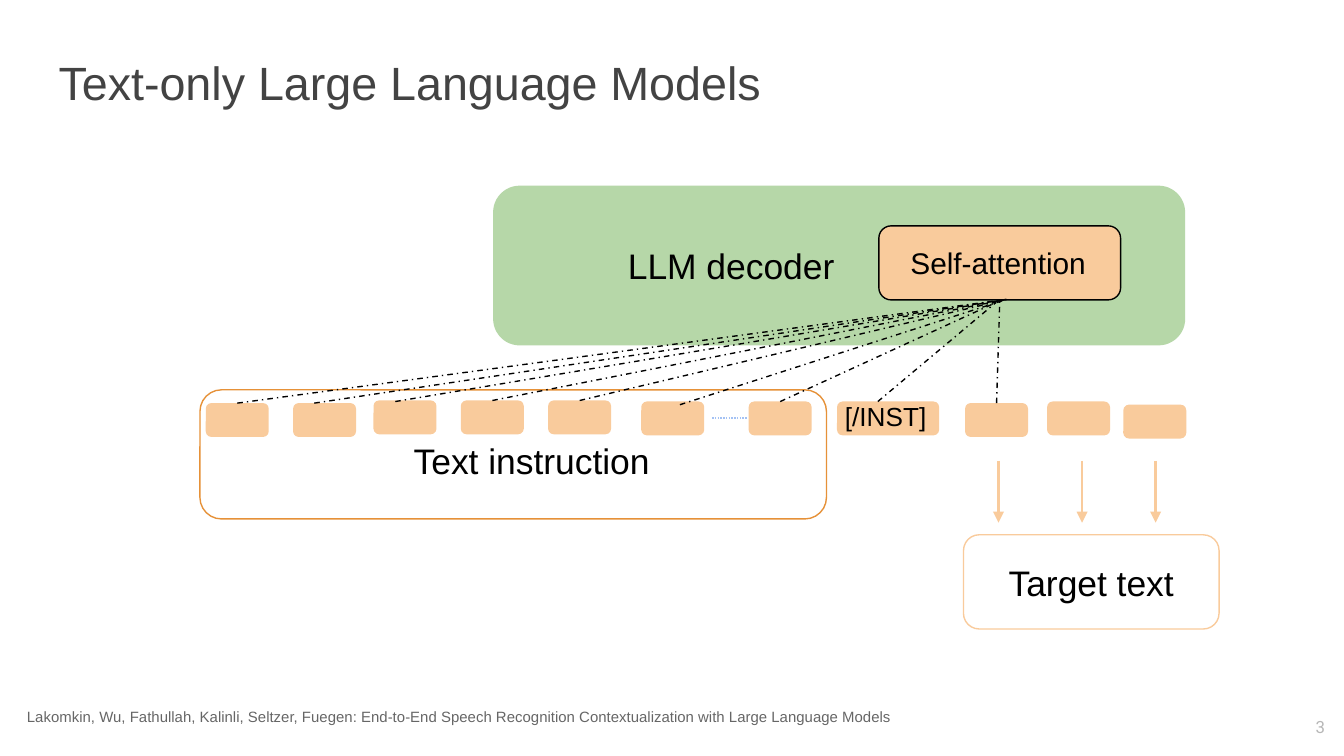
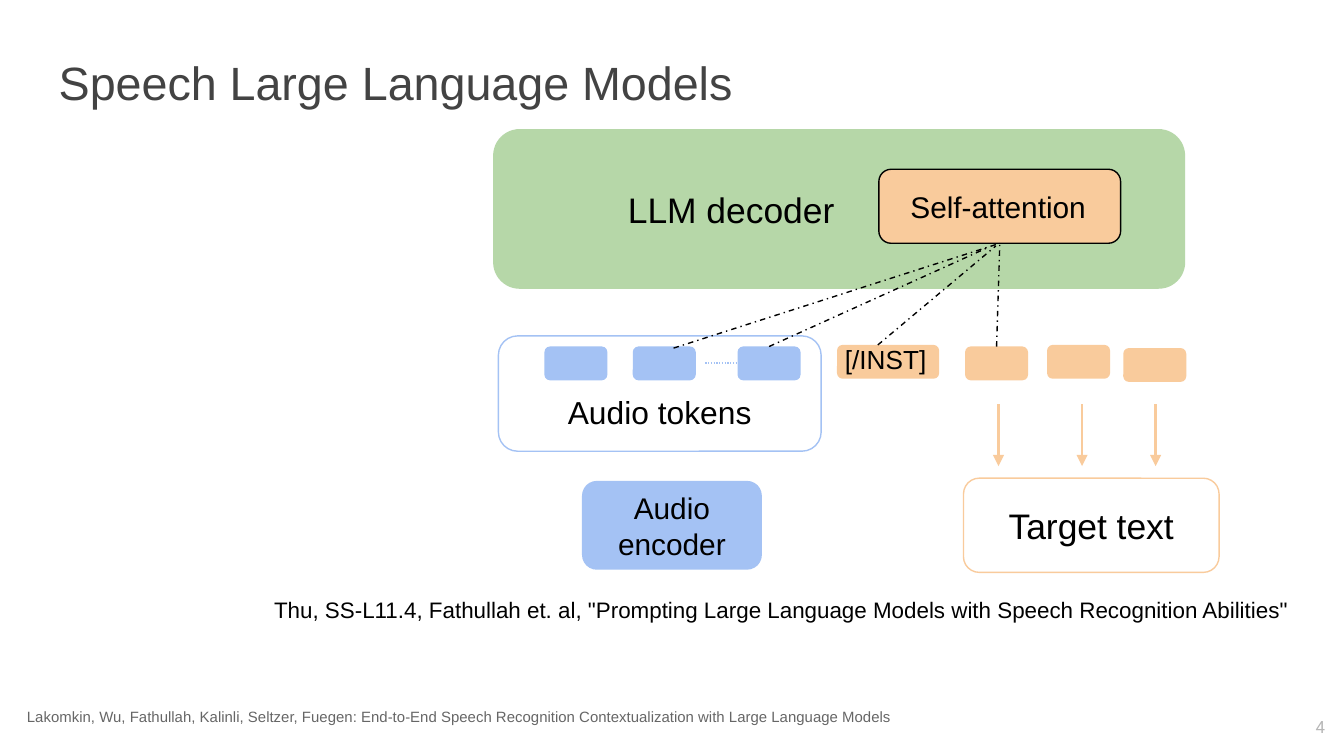
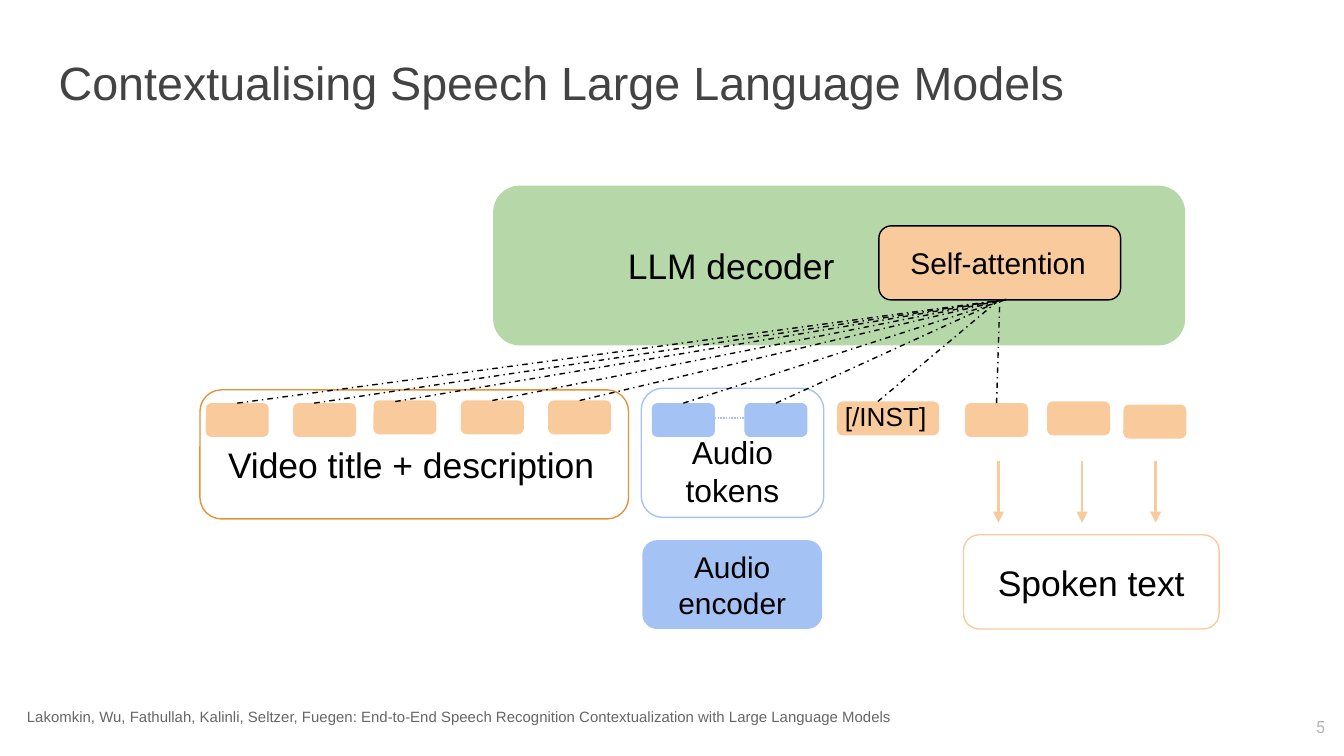
from lxml import etree
from pptx import Presentation
from pptx.dml.color import RGBColor
from pptx.enum import dml, shapes, text
from pptx.oxml import ns
from pptx.util import Cm, Pt

BLACK, GREY, TITLE_GREY, NUMBER_GREY = "000000", "666666", "434343", "B7B7B7"
GREEN, PEACH, ORANGE, BLUE = "B6D7A8", "F9CB9C", "E69138", "A4C2F4"
FOOTER = ("Lakomkin, Wu, Fathullah, Kalinli, Seltzer, Fuegen: End-to-End Speech "
          "Recognition Contextualization with Large Language Models")
TOKEN_W, TOKEN_H = 1.19, 0.64
TEXT_TOKENS = [(3.89, 7.62), (5.54, 7.62), (7.06, 7.57), (8.71, 7.57), (10.36, 7.57)]
TARGET_TOKENS = [(18.24, 7.62), (19.79, 7.59), (21.23, 7.65)]
ARROW_XS = [18.87, 20.45, 21.84]
RAY_END = (19.02, 5.66)
INNER = 0.53
CENTER = text.PP_ALIGN.CENTER


def color(value):
    return RGBColor.from_string(value)


def write(sp, content, size, fill=BLACK, font="Arial", align=text.PP_ALIGN.LEFT,
          anchor=text.MSO_ANCHOR.MIDDLE, insets=(INNER,) * 4, wrap=True):
    tf = sp.text_frame
    tf.word_wrap = wrap
    tf.vertical_anchor = anchor
    tf.margin_left, tf.margin_top, tf.margin_right, tf.margin_bottom = map(Cm, insets)
    p = tf.paragraphs[0]
    p.text = content
    p.alignment = align
    p.font.size, p.font.name = Pt(size), font
    p.font.color.rgb = color(fill)
    return p


def textbox(s, box, content, size, **style):
    return write(s.shapes.add_textbox(*map(Cm, box)), content, size, **style)


def rounded(s, x, y, w, h, fill=None, line=None):
    sp = s.shapes.add_shape(shapes.MSO_SHAPE.ROUNDED_RECTANGLE, Cm(x), Cm(y), Cm(w), Cm(h))
    sp.shadow.inherit = False
    if fill:
        sp.fill.solid()
        sp.fill.fore_color.rgb = color(fill)
    else:
        sp.fill.background()
    if line:
        sp.line.color.rgb = color(line)
        sp.line.width = Pt(0.75)
    else:
        sp.line.fill.background()
    return sp


def token(s, x, y, fill):
    return rounded(s, x, y, TOKEN_W, TOKEN_H, fill)


def connector(s, start, end, fill, width=0.75, dash=None, arrow=False):
    start_point = start if isinstance(start, tuple) else (0, 0)
    end_point = end if isinstance(end, tuple) else (0, 0)
    c = s.shapes.add_connector(shapes.MSO_CONNECTOR.STRAIGHT, *map(Cm, start_point + end_point))
    if start is not start_point:
        c.begin_connect(start, 0)
    if end is not end_point:
        c.end_connect(end, 2)
    c.line.color.rgb = color(fill)
    c.line.width = Pt(width)
    if dash:
        c.line.dash_style = dash
    if arrow:
        etree.SubElement(c.line._get_or_add_ln(), ns.qn("a:tailEnd"), type="triangle")
    etree.SubElement(c._element.spPr, ns.qn("a:effectLst"))


def ray(s, start, end=RAY_END):
    connector(s, start, end, BLACK, dash=dml.MSO_LINE.DASH_DOT)


def ellipsis_line(s, x1, x2, y):
    connector(s, (x1, y), (x2, y), BLUE, dash=dml.MSO_LINE.ROUND_DOT)


def new_slide(prs, title, number):
    s = prs.slides.add_slide(prs.slide_layouts[6])
    none = (0,) * 4
    p = textbox(s, (0.51, 13.03, 17.81, 0.99), FOOTER, 8, fill=GREY, insets=none)
    p.line_spacing = 1.15
    textbox(s, (0.86, 0.76, 23.67, 1.68), title, 25, fill=TITLE_GREY,
            anchor=text.MSO_ANCHOR.TOP, insets=(0.25,) * 4)
    textbox(s, (24.28, 13.46, 0.76, 0.56), str(number), 9, fill=NUMBER_GREY, font="Roboto",
            align=text.PP_ALIGN.RIGHT, insets=none)
    return s


def decoder_stage(s, output, dy=0):
    decoder = rounded(s, 9.32, 3.51 + dy, 13.08, 3.02, GREEN)
    write(decoder, "LLM decoder", 19, insets=(2.4, INNER, INNER, INNER))
    target = rounded(s, 18.21, 10.11 + dy, 4.83, 1.78, line=PEACH)
    write(target, output, 19, align=CENTER)
    targets = [token(s, x, y + dy, PEACH) for x, y in TARGET_TOKENS]
    for x in ARROW_XS:
        connector(s, (x, 8.71 + dy), (x, 9.88 + dy), PEACH, 1.5, arrow=True)
    rounded(s, 15.82, 7.59 + dy, 1.93, TOKEN_H, PEACH)
    textbox(s, (15.72, 7.32 + dy, 2.39, 0.51), "[/INST]", 14,
            anchor=text.MSO_ANCHOR.TOP, insets=(0.25,) * 4)
    attention = rounded(s, 16.61, 4.27 + dy, 4.57, 1.4, PEACH, BLACK)
    write(attention, "Self-attention", 16)
    ray(s, (16.59, 7.59 + dy), (18.82, 5.72 + dy))
    ray(s, targets[0], attention)
    return attention


def text_prompt(s, width, label, label_box):
    tokens = [token(s, x, y, PEACH) for x, y in TEXT_TOKENS]
    rounded(s, 3.78, 7.37, width, 2.44, line=ORANGE)
    textbox(s, label_box, label, 19, anchor=text.MSO_ANCHOR.TOP)
    for start in (tokens[0], (5.94, 7.62), (7.47, 7.59), tokens[3], tokens[4]):
        ray(s, start)


def audio_prompt(s, frame, token_xs, token_y, encoder_x, encoder_y):
    box = rounded(s, *frame, line=BLUE)
    write(box, "Audio tokens", 17, align=CENTER, insets=(INNER, 0.69, INNER, 0))
    encoder = rounded(s, encoder_x, encoder_y, 3.4, 1.68, BLUE)
    write(encoder, "Audio encoder", 16, align=CENTER)
    return [token(s, x, token_y, BLUE) for x in token_xs]


def text_only_slide(prs):
    s = new_slide(prs, "Text-only Large Language Models", 3)
    decoder_stage(s, "Target text")
    text_prompt(s, 11.84, "Text instruction", (7.29, 7.9, 7.98, 1.88))
    ellipsis_line(s, 13.46, 14.12, 7.9)
    last = [token(s, x, 7.59, PEACH) for x in (12.12, 14.15)][-1]
    ray(s, (12.85, 7.65))
    ray(s, last, (18.82, 5.72))


def speech_slide(prs):
    s = new_slide(prs, "Speech Large Language Models", 4)
    attention = decoder_stage(s, "Target text", -1.07)
    tokens = audio_prompt(s, (9.42, 6.35, 6.1, 2.18), (10.29, 11.96, 13.94), 6.55, 11, 9.09)
    ellipsis_line(s, 13.33, 13.97, 6.86)
    ray(s, (12.73, 6.58), attention)
    ray(s, tokens[-1], (18.69, 4.67))
    textbox(s, (4.93, 11.02, 24, 1.02),
            'Thu, SS-L11.4, Fathullah et. al, "Prompting Large Language Models '
            'with Speech Recognition Abilities"', 12,
            anchor=text.MSO_ANCHOR.TOP, insets=(0.25,) * 4)


def contextual_slide(prs):
    s = new_slide(prs, "Contextualising Speech Large Language Models", 5)
    decoder_stage(s, "Spoken text")
    first, last = audio_prompt(s, (12.12, 7.34, 3.45, 2.44), (12.32, 14.07), 7.62, 12.14, 10.21)
    ellipsis_line(s, 13.46, 14.12, 7.9)
    text_prompt(s, 8.1, "Video title + description", (3.78, 7.98, 9.32, 1.88))
    ray(s, first)
    ray(s, last, (18.82, 5.72))


def main():
    prs = Presentation()
    prs.slide_width, prs.slide_height = Cm(25.4), Cm(14.29)
    text_only_slide(prs)
    speech_slide(prs)
    contextual_slide(prs)
    prs.save("out.pptx")


if __name__ == "__main__":
    main()
